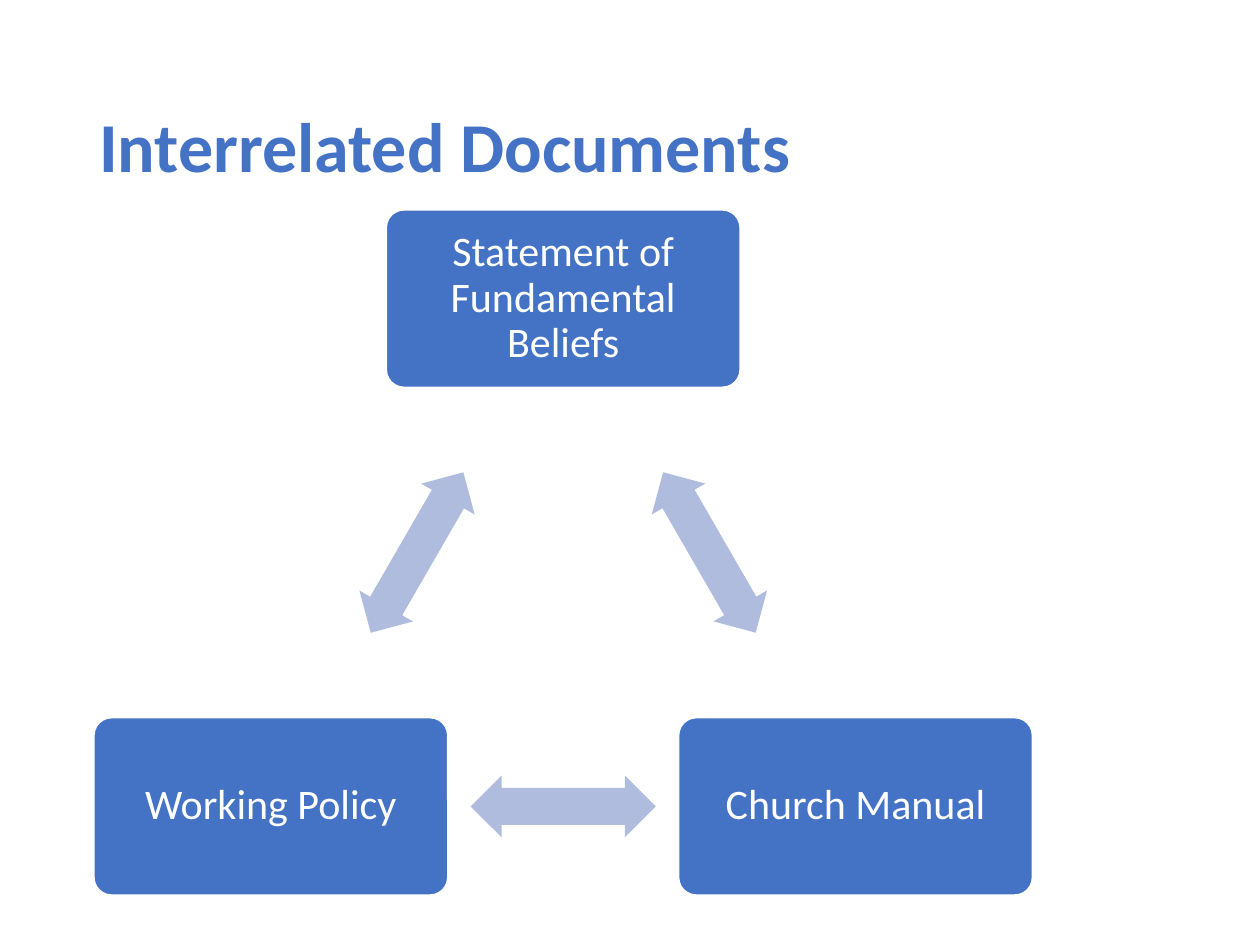
from dataclasses import dataclass

from pptx import Presentation
from pptx.dml.color import RGBColor
from pptx.enum.shapes import MSO_SHAPE
from pptx.enum.text import MSO_ANCHOR, PP_ALIGN
from pptx.util import Inches, Pt

ROUNDED = MSO_SHAPE.ROUNDED_RECTANGLE
DOUBLE_ARROW = MSO_SHAPE.LEFT_RIGHT_ARROW
MIDDLE = MSO_ANCHOR.MIDDLE
LEFT, CENTER = PP_ALIGN.LEFT, PP_ALIGN.CENTER


@dataclass(frozen=True)
class Theme:
    font: str = "Calibri"
    blue: RGBColor = RGBColor(0x44, 0x72, 0xC4)
    pale: RGBColor = RGBColor(0xB0, 0xBC, 0xDE)
    white: RGBColor = RGBColor(0xFF, 0xFF, 0xFF)
    title_size: int = 40
    document_size: int = 24


THEME = Theme()


def write(shape, text, *, size, color, bold=False, align=LEFT, spacing=1.0,
          inset_x=0.1, inset_y=0.05):
    frame = shape.text_frame
    frame.word_wrap = True
    frame.vertical_anchor = MIDDLE
    frame.margin_left = frame.margin_right = Inches(inset_x)
    frame.margin_top = frame.margin_bottom = Inches(inset_y)
    paragraph = frame.paragraphs[0]
    paragraph.alignment = align
    paragraph.line_spacing = spacing
    run = paragraph.add_run()
    run.text = text
    run.font.name = THEME.font
    run.font.size = Pt(size)
    run.font.bold = bold
    run.font.color.rgb = color


def add_filled(kind, center, size, fill, adjustments):
    """Add a preset shape around its center point."""
    (x, y), (width, height) = center, size
    shape = slide.shapes.add_shape(
        kind, Inches(x - width / 2), Inches(y - height / 2),
        Inches(width), Inches(height))
    for index, value in enumerate(adjustments):
        shape.adjustments[index] = value
    shape.shadow.inherit = False
    shape.fill.solid()
    shape.fill.fore_color.rgb = fill
    shape.line.fill.background()
    return shape


prs = Presentation()
prs.slide_width, prs.slide_height = Inches(10), Inches(7.5)
slide = prs.slides.add_slide(prs.slide_layouts[6])

title = slide.shapes.add_textbox(Inches(0.69), Inches(0.4), Inches(7.31), Inches(1.45))
write(title, "Interrelated Documents", size=THEME.title_size, color=THEME.blue,
      bold=True, spacing=1.07)

# Three documents at the corners of a triangle, clockwise from the top
CENTER_X, TOP_Y, BOTTOM_Y, HALF_BASE = 4.47, 2.37, 6.4, 2.32
documents = [
    ("Statement of Fundamental Beliefs", (CENTER_X, TOP_Y)),
    ("Church Manual", (CENTER_X + HALF_BASE, BOTTOM_Y)),
    ("Working Policy", (CENTER_X - HALF_BASE, BOTTOM_Y)),
]
arrow_angles = [60, 180, 300]

for index, (name, corner) in enumerate(documents):
    box = add_filled(ROUNDED, corner, (2.81, 1.41), THEME.blue, [0.1])
    box.line.color.rgb = THEME.white
    box.line.width = Pt(1)
    write(box, name, size=THEME.document_size, color=THEME.white, align=CENTER,
          spacing=0.9, inset_x=0.14, inset_y=0.14)

    # The arrow sits halfway to the next document
    next_corner = documents[(index + 1) % len(documents)][1]
    midpoint = [(a + b) / 2 for a, b in zip(corner, next_corner)]
    arrow = add_filled(DOUBLE_ARROW, midpoint, (1.47, 0.49), THEME.pale, [0.6, 0.5])
    arrow.rotation = arrow_angles[index]

prs.save("out.pptx")
